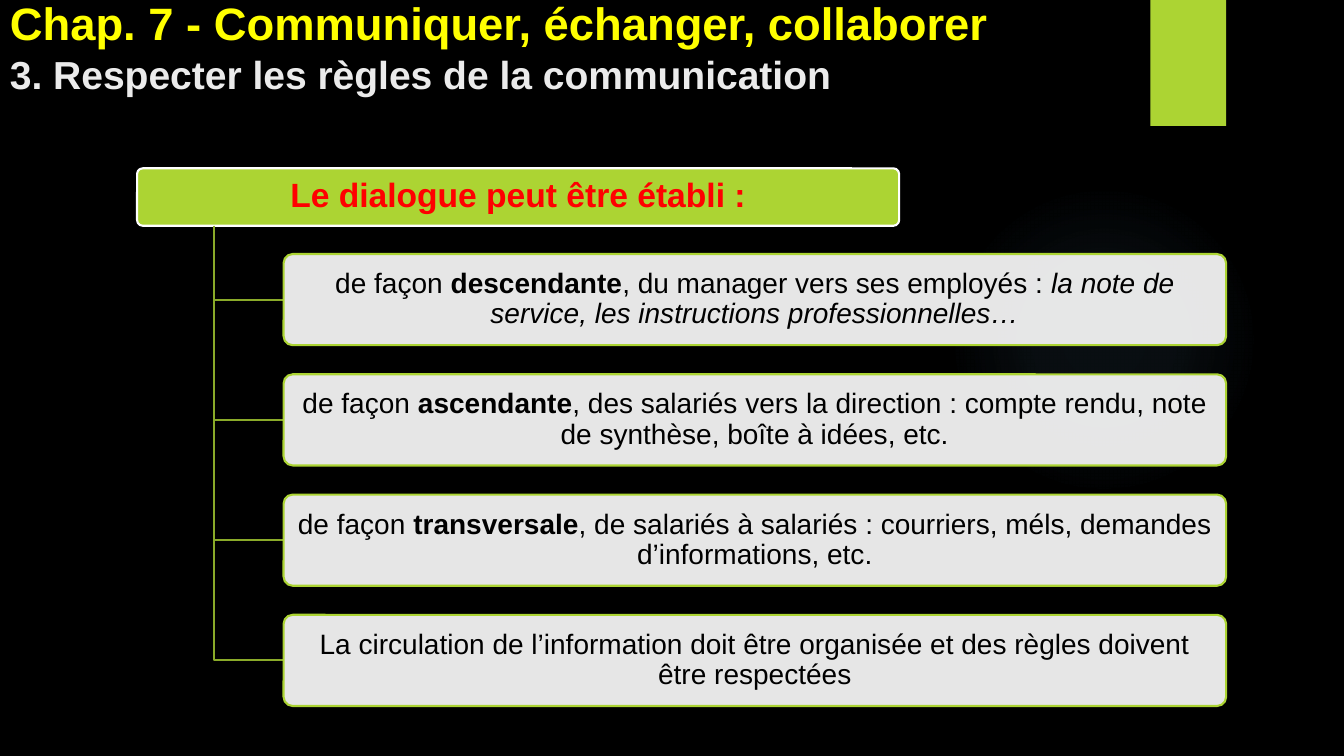
from dataclasses import dataclass

from pptx import Presentation
from pptx.dml.color import RGBColor
from pptx.enum.shapes import MSO_SHAPE
from pptx.enum.text import MSO_ANCHOR, PP_ALIGN
from pptx.oxml import parse_xml
from pptx.oxml.ns import qn
from pptx.shapes.autoshape import Shape
from pptx.slide import Slide
from pptx.text.text import _Run
from pptx.util import Inches, Pt
from lxml.etree import SubElement

WIDE = Inches(13.33)
HIGH = Inches(7.5)
SPACE = "http://schemas.openxmlformats.org/drawingml/2006/main"


@dataclass(frozen=True)
class Theme:
    font: str = "Arial"
    back: str = "000000"
    lime: str = "ACD433"
    olive: str = "8AAA29"
    white: str = "FFFFFF"
    black: str = "000000"
    red: str = "FF0000"
    yellow: str = "FFFF00"
    pale: str = "EBEBEB"
    sky: str = "7AC4F0"
    title: float = 32.4
    section: float = 27.9
    head: float = 24
    body: float = 20
    stroke: float = 1.5


@dataclass(frozen=True)
class Area:
    """Percent shares of the slide's width and height."""
    left: float
    top: float
    width: float
    height: float

    def frame(self) -> tuple[int, int, int, int]:
        return across(self.left), down(self.top), across(self.width), down(self.height)


@dataclass(frozen=True)
class Bit:
    text: str
    bold: bool = False
    slant: bool = False


THEME = Theme()
GLOW = Area(70.59, 24.4, 23.1, 41.07)
BAND = Area(85.6, 0, 5.63, 16.67)
TITLE = Area(0, 0, 84.38, 13.47)
HEAD = Area(10.2, 22.27, 56.7, 7.6)
LEAF = Area(21.1, 33.6, 70.13, 12.06)
PITCH = 15.91
TRUNK = 15.9

LEAVES: list[list[Bit]] = [
    [
        Bit("de façon "),
        Bit("descendante", bold=True),
        Bit(", du manager vers ses employés : "),
        Bit("la note de service, les instructions professionnelles…", slant=True),
    ],
    [
        Bit("de façon "),
        Bit("ascendante", bold=True),
        Bit(", des salariés vers la direction : compte rendu, note de synthèse, boîte à idées, etc."),
    ],
    [
        Bit("de façon "),
        Bit("transversale", bold=True),
        Bit(", de salariés à salariés : courriers, méls, demandes d’informations, etc."),
    ],
    [Bit("La circulation de l’information doit être organisée et des règles doivent être respectées")],
]


def across(share: float) -> int:
    return round(WIDE * share / 100)


def down(share: float) -> int:
    return round(HIGH * share / 100)


def style(run: _Run, size: float, color: str, bold: bool = False, slant: bool = False) -> None:
    font = run.font
    font.name, font.size = THEME.font, Pt(size)
    font.bold, font.italic = bold, slant
    font.color.rgb = RGBColor.from_string(color)


def outline(shape: Shape, color: str) -> None:
    shape.line.color.rgb = RGBColor.from_string(color)
    shape.line.width = Pt(THEME.stroke)


def draw_block(slide: Slide, kind: MSO_SHAPE, area: Area, fill: str) -> Shape:
    shape = slide.shapes.add_shape(kind, *area.frame())
    shape.shadow.inherit = False
    shape.fill.solid()
    shape.fill.fore_color.rgb = RGBColor.from_string(fill)
    shape.line.fill.background()
    return shape


def draw_glow(slide: Slide) -> None:
    shape = draw_block(slide, MSO_SHAPE.OVAL, GLOW, THEME.sky)
    stops = "".join(
        f'<a:gs pos="{spot * 1000}"><a:srgbClr val="{THEME.sky}">'
        f'<a:alpha val="{alpha * 1000}"/></a:srgbClr></a:gs>'
        for spot, alpha in ((0, 7), (36, 6), (69, 0), (100, 0))
    )
    blend = parse_xml(
        f'<a:gradFill xmlns:a="{SPACE}" rotWithShape="1"><a:gsLst>{stops}</a:gsLst>'
        '<a:path path="circle"><a:fillToRect l="50000" t="50000" r="50000" b="50000"/>'
        "</a:path></a:gradFill>"
    )
    props = shape._element.spPr
    props.replace(props.find(qn("a:solidFill")), blend)


def draw_title(slide: Slide) -> None:
    frame = slide.shapes.add_textbox(*TITLE.frame()).text_frame
    frame.word_wrap = True
    frame.vertical_anchor = MSO_ANCHOR.BOTTOM
    frame.text = "Chap. 7 - Communiquer, échanger, collaborer\v3. Respecter les règles de la communication"
    first, second = frame.paragraphs[0].runs
    style(first, THEME.title, THEME.yellow, bold=True)
    style(second, THEME.section, THEME.pale, bold=True)


def draw_card(slide: Slide, area: Area, bits: list[Bit], fill: str, edge: str,
              size: float, color: str) -> Shape:
    card = draw_block(slide, MSO_SHAPE.ROUNDED_RECTANGLE, area, fill)
    card.adjustments[0] = 0.1
    outline(card, edge)
    frame = card.text_frame
    frame.word_wrap = True
    frame.vertical_anchor = MSO_ANCHOR.MIDDLE
    frame.margin_left = frame.margin_right = Inches(0.07)
    frame.margin_top = frame.margin_bottom = Inches(0.05)
    line = frame.paragraphs[0]
    line.alignment = PP_ALIGN.CENTER
    line.line_spacing = 0.9
    line.text = bits[0].text
    for bit in bits[1:]:
        line.add_run().text = bit.text
    for run, bit in zip(line.runs, bits):
        style(run, size, color, bit.bold, bit.slant)
    return card


def draw_branch(slide: Slide, area: Area) -> None:
    level = down(area.top + area.height / 2)
    path = slide.shapes.build_freeform(across(TRUNK), down(HEAD.top + HEAD.height))
    path.add_line_segments([(across(TRUNK), level), (across(area.left), level)], close=False)
    branch = path.convert_to_shape()
    branch.shadow.inherit = False
    branch.fill.background()
    outline(branch, THEME.olive)


def draw_leaf(slide: Slide, area: Area, bits: list[Bit]) -> None:
    draw_branch(slide, area)
    card = draw_card(slide, area, bits, THEME.white, THEME.lime, THEME.body, THEME.black)
    tint = card._element.spPr.find(qn("a:solidFill"))[0]
    SubElement(tint, qn("a:alpha"), val="90000")


def main() -> None:
    deck = Presentation()
    deck.slide_width, deck.slide_height = WIDE, HIGH
    slide = deck.slides.add_slide(deck.slide_layouts[6])
    slide.background.fill.solid()
    slide.background.fill.fore_color.rgb = RGBColor.from_string(THEME.back)
    draw_glow(slide)
    draw_block(slide, MSO_SHAPE.RECTANGLE, BAND, THEME.lime)
    draw_title(slide)
    draw_card(slide, HEAD, [Bit("Le dialogue peut être établi :", bold=True)],
              THEME.lime, THEME.white, THEME.head, THEME.red)
    for index, bits in enumerate(LEAVES):
        area = Area(LEAF.left, LEAF.top + index * PITCH, LEAF.width, LEAF.height)
        draw_leaf(slide, area, bits)
    deck.save("out.pptx")


if __name__ == "__main__":
    main()
